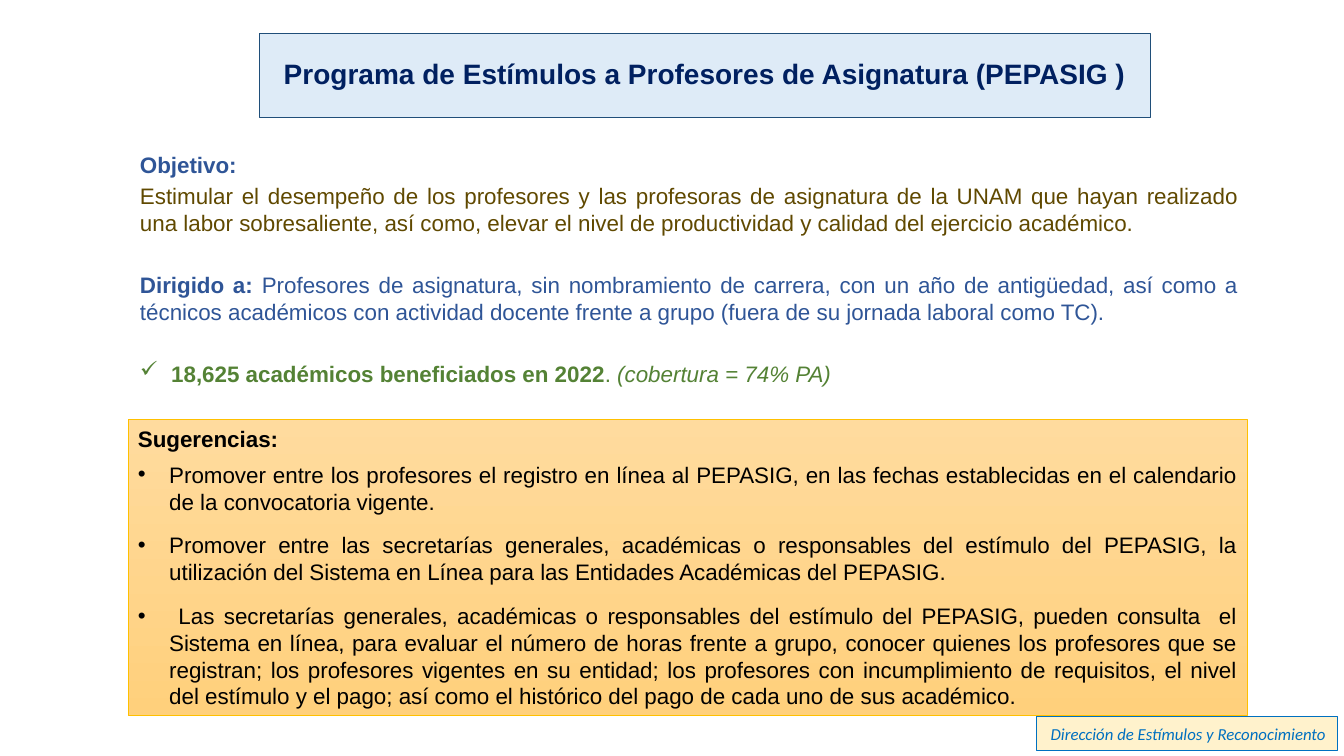
from pptx import Presentation
from pptx.dml.color import RGBColor
from pptx.enum.shapes import MSO_SHAPE
from pptx.enum.text import MSO_ANCHOR, MSO_AUTO_SIZE, PP_ALIGN
from pptx.oxml.ns import qn
from pptx.util import Inches, Pt
from lxml import etree

RECT = MSO_SHAPE.RECTANGLE
MIDDLE = MSO_ANCHOR.MIDDLE
GROW, FIXED = MSO_AUTO_SIZE.SHAPE_TO_FIT_TEXT, MSO_AUTO_SIZE.NONE
LEFT, CENTER, JUSTIFY = PP_ALIGN.LEFT, PP_ALIGN.CENTER, PP_ALIGN.JUSTIFY

NAVY = RGBColor(0x00, 0x20, 0x60)
BLUE = RGBColor(0x2F, 0x55, 0x97)
BROWN = RGBColor(0x60, 0x49, 0x00)
GREEN = RGBColor(0x54, 0x82, 0x35)
BLACK = RGBColor(0x00, 0x00, 0x00)
PALE_BLUE = RGBColor(0xDE, 0xEB, 0xF7)
DARK_BLUE = RGBColor(0x1F, 0x4E, 0x79)
GOLD = RGBColor(0xFF, 0xC0, 0x00)
ORANGE_TOP = RGBColor(0xFF, 0xDB, 0x9E)
ORANGE_BOTTOM = RGBColor(0xFF, 0xD0, 0x7C)
CREAM = RGBColor(0xFF, 0xF2, 0xCC)
SKY = RGBColor(0x00, 0x70, 0xC0)

TITLE = "Programa de Estímulos a Profesores de Asignatura (PEPASIG )"
FOOTER = "Dirección de Estímulos y Reconocimiento"

# Each paragraph: space before, bullet, runs of (text, colour, bold, italic)
SUMMARY = [
    (3.2, None, [("Objetivo:", BLUE, True, False)]),
    (3.2, None, [("Estimular el desempeño de los profesores y las profesoras de "
                  "asignatura de la UNAM que hayan realizado una labor sobresaliente, "
                  "así como, elevar el nivel de productividad y calidad del ejercicio "
                  "académico.", BROWN, False, False)]),
    (25, None, [("Dirigido a: ", BLUE, True, False),
                ("Profesores de asignatura, sin nombramiento de carrera, con un año de "
                 "antigüedad, así como a técnicos académicos con actividad docente frente "
                 "a grupo (fuera de su jornada laboral como TC).", BLUE, False, False)]),
    (25, "✓", [("18,625 académicos beneficiados en 2022", GREEN, True, False),
               (". ", GREEN, False, False),
               ("(cobertura = 74% PA)", GREEN, False, True)]),
]
SUGGESTIONS_HEAD = "Sugerencias:"
SUGGESTIONS = [
    "Promover entre los profesores el registro en línea al PEPASIG, en las fechas "
    "establecidas en el calendario de la convocatoria vigente.",
    "Promover entre las secretarías generales, académicas o responsables del estímulo "
    "del PEPASIG, la utilización del Sistema en Línea para las Entidades Académicas "
    "del PEPASIG.",
    " Las secretarías generales, académicas o responsables del estímulo del PEPASIG, "
    "pueden consulta  el Sistema en línea, para evaluar el número de horas frente a "
    "grupo, conocer quienes los profesores que se registran; los profesores vigentes "
    "en su entidad; los profesores con incumplimiento de requisitos, el nivel del "
    "estímulo y el pago; así como el histórico del pago de cada uno de sus académico.",
]


def place(sp, left, top, width, height):
    sp.left, sp.top = Inches(left), Inches(top)
    sp.width, sp.height = Inches(width), Inches(height)


def outline(sp, color, width):
    sp.line.color.rgb = color
    sp.line.width = Pt(width)


def add_box(slide, box, line, width):
    sp = slide.shapes.add_shape(RECT, *map(Inches, box))
    sp.shadow.inherit = False
    outline(sp, line, width)
    sp.text_frame.vertical_anchor = MIDDLE
    return sp


def add_run(p, text, color, bold=False, italic=False, size=16, font="Arial"):
    r = p.add_run()
    r.text = text
    r.font.name, r.font.size = font, Pt(size)
    r.font.bold, r.font.italic = bold, italic
    r.font.color.rgb = color


def next_paragraph(tf, align, before=0, after=0):
    p = tf.add_paragraph() if tf.paragraphs[0].runs else tf.paragraphs[0]
    p.alignment = align
    p.space_before, p.space_after = Pt(before), Pt(after)
    return p


def indent(p, left, bullet=None):
    pPr = p._p.get_or_add_pPr()
    pPr.set("marL", str(Inches(left)))
    pPr.set("indent", str(Inches(-0.31 if bullet else 0)))
    if bullet:
        font = "Wingdings" if bullet == "✓" else "Arial"
        etree.SubElement(pPr, qn("a:buFont"), typeface=font)
        char = "ü" if bullet == "✓" else bullet
        etree.SubElement(pPr, qn("a:buChar"), char=char)


def add_title(slide):
    sp = slide.shapes.title
    place(sp, 2.57, 0.33, 8.84, 0.84)
    sp.fill.solid()
    sp.fill.fore_color.rgb = PALE_BLUE
    outline(sp, DARK_BLUE, 0.75)
    tf = sp.text_frame
    tf.auto_size, tf.vertical_anchor = FIXED, MIDDLE
    p = next_paragraph(tf, CENTER)
    p.line_spacing = 0.9
    add_run(p, TITLE, NAVY, True, size=20)


def add_summary(slide):
    tf = slide.shapes.add_textbox(*map(Inches, (0.85, 1.45, 11.53, 2.44))).text_frame
    tf.word_wrap = True
    for before, bullet, runs in SUMMARY:
        p = next_paragraph(tf, JUSTIFY, before)
        indent(p, 0.75 if bullet else 0.44, bullet)
        for run in runs:
            add_run(p, *run)


def add_suggestions(slide):
    sp = add_box(slide, (1.27, 4.16, 11.1, 2.94), GOLD, 0.5)
    sp.fill.gradient()
    sp.fill.gradient_angle = 270
    for stop, color in zip(sp.fill.gradient_stops, (ORANGE_TOP, ORANGE_BOTTOM)):
        stop.color.rgb = color
    tf = sp.text_frame
    tf.word_wrap, tf.auto_size = True, GROW
    add_run(next_paragraph(tf, LEFT), SUGGESTIONS_HEAD, BLACK, True)
    for text in SUGGESTIONS:
        p = next_paragraph(tf, JUSTIFY, 6, 6)
        indent(p, 0.31, "•")
        add_run(p, text, BLACK)


def add_footer(slide):
    sp = add_box(slide, (10.28, 7.11, 2.99, 0.34), SKY, 0.75)
    sp.fill.solid()
    sp.fill.fore_color.rgb = CREAM
    tf = sp.text_frame
    tf.margin_left = Inches(0.14)
    tf.word_wrap = True
    tf.margin_right = Inches(0.05)
    add_run(next_paragraph(tf, LEFT), FOOTER, SKY, italic=True, size=12, font="Calibri")


def main():
    """Build the PEPASIG programme slide."""
    prs = Presentation()
    prs.slide_width, prs.slide_height = Inches(13.33), Inches(7.5)
    slide = prs.slides.add_slide(prs.slide_layouts[5])
    add_title(slide)
    add_summary(slide)
    add_suggestions(slide)
    add_footer(slide)
    prs.save("out.pptx")


if __name__ == "__main__":
    main()
